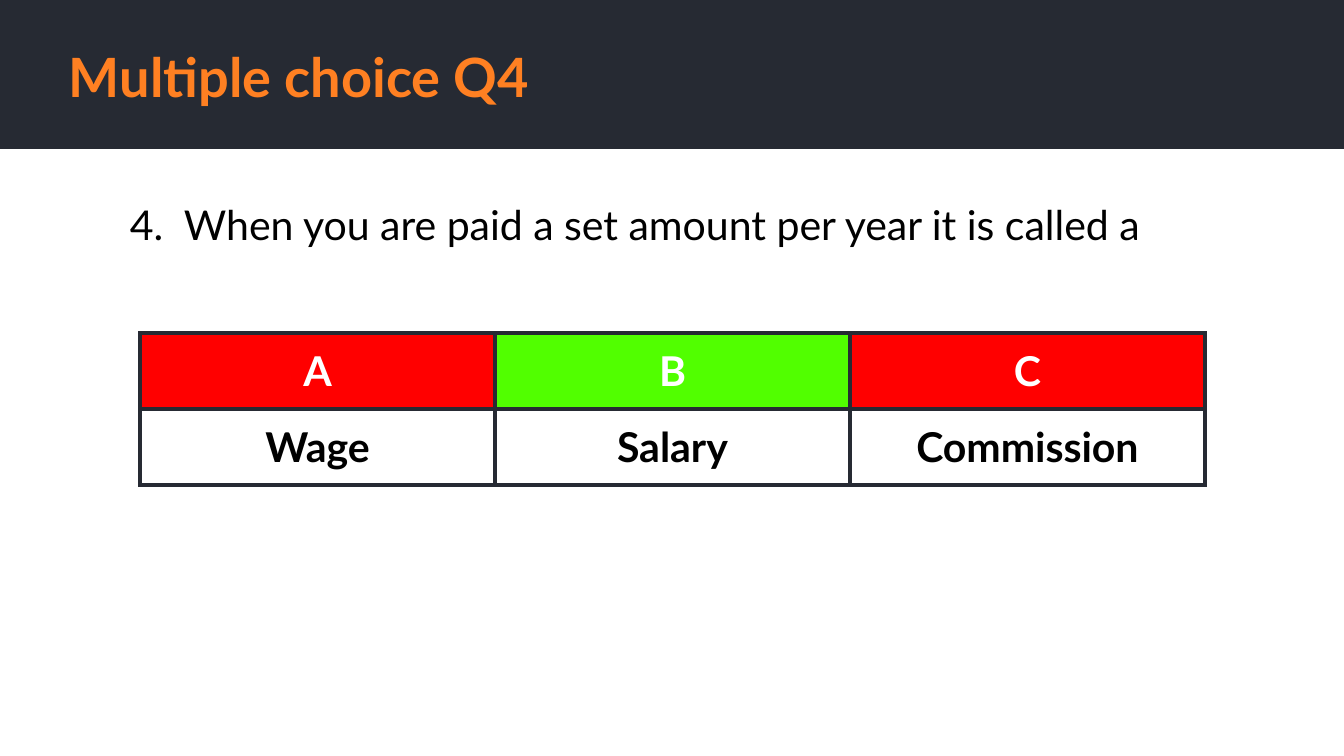
from lxml.etree import SubElement
from pptx import Presentation
from pptx.dml.color import RGBColor
from pptx.enum.shapes import MSO_SHAPE
from pptx.enum.text import MSO_ANCHOR, PP_ALIGN
from pptx.oxml import parse_xml
from pptx.oxml.ns import nsdecls, qn
from pptx.util import Inches, Pt

PX_PER_INCH = 134.4
NAVY = RGBColor(0x26, 0x2A, 0x33)
ORANGE = RGBColor(0xFF, 0x80, 0x22)
RED = RGBColor(0xFF, 0x00, 0x00)
GREEN = RGBColor(0x51, 0xFF, 0x00)
WHITE = RGBColor(0xFF, 0xFF, 0xFF)
BLACK = RGBColor(0x00, 0x00, 0x00)


def emu(px):
    return Inches(px / PX_PER_INCH)


def write(frame, text, *, size=22, color=BLACK, bold=False, align=PP_ALIGN.LEFT):
    paragraph = frame.paragraphs[0]
    paragraph.alignment = align
    run = paragraph.add_run()
    run.text = text
    run.font.name = "Lato"
    run.font.size = Pt(size)
    run.font.bold = bold
    run.font.color.rgb = color
    return paragraph


def number(paragraph, start, indent, hanging):
    """Number the paragraph from start, with a hanging indent in px."""
    properties = paragraph._p.get_or_add_pPr()
    properties.set("marL", str(emu(indent)))
    properties.set("indent", str(-emu(hanging)))
    color = SubElement(properties, qn("a:buClr"))
    SubElement(color, qn("a:srgbClr"), val=str(BLACK))
    SubElement(properties, qn("a:buAutoNum"), type="arabicPeriod", startAt=str(start))


def outline(cell, color, points):
    properties = cell._tc.get_or_add_tcPr()
    for position, side in enumerate("LRTB"):
        properties.insert(position, parse_xml(
            f'<a:ln{side} {nsdecls("a")} w="{Pt(points)}"><a:solidFill>'
            f'<a:srgbClr val="{color}"/></a:solidFill></a:ln{side}>'))


class QuizSlide:
    """Holds the style and the current slide."""

    inset = 13
    border = 2.25

    def __init__(self, deck):
        self.slide = deck.slides.add_slide(deck.slide_layouts[6])

    def pad(self, target):
        target.margin_left = target.margin_right = emu(self.inset)
        target.margin_top = target.margin_bottom = emu(self.inset)

    def band(self, *box, color):
        band = self.slide.shapes.add_shape(MSO_SHAPE.RECTANGLE, *map(emu, box))
        band.shadow.inherit = False
        band.fill.solid()
        band.fill.fore_color.rgb = color
        band.line.fill.background()

    def text(self, text, *box, anchor=MSO_ANCHOR.TOP, **style):
        frame = self.slide.shapes.add_textbox(*map(emu, box)).text_frame
        frame.word_wrap = True
        frame.vertical_anchor = anchor
        self.pad(frame)
        return write(frame, text, **style)

    def answers(self, left, top, column_width, row_height, choices):
        """Draw one column per (letter, colour, answer)."""
        table = self.slide.shapes.add_table(
            2, len(choices), emu(left), emu(top),
            emu(column_width * len(choices)), emu(row_height * 2)).table
        table.first_row = table.horz_banding = False
        for column, (letter, color, answer) in enumerate(choices):
            table.columns[column].width = emu(column_width)
            head, body = table.cell(0, column), table.cell(1, column)
            head.fill.solid()
            head.fill.fore_color.rgb = color
            body.fill.background()
            body.vertical_anchor = MSO_ANCHOR.MIDDLE
            for cell, label, ink in ((head, letter, WHITE), (body, answer, BLACK)):
                self.pad(cell)
                outline(cell, NAVY, self.border)
                write(cell.text_frame, label, color=ink, bold=True,
                      align=PP_ALIGN.CENTER)


def main():
    deck = Presentation()
    deck.slide_width, deck.slide_height = emu(1344), emu(756)
    quiz = QuizSlide(deck)
    quiz.band(0, 0, 1344, 149, color=NAVY)
    quiz.answers(140, 333, 355, 76, [
        ("A", RED, "Wage"),
        ("B", GREEN, "Salary"),
        ("C", RED, "Commission"),
    ])
    quiz.text("Multiple choice Q4", 56, 38, 1175, 76,
              anchor=MSO_ANCHOR.MIDDLE, size=29, color=ORANGE, bold=True)
    question = quiz.text("When you are paid a set amount per year it is called a",
                         104, 186, 1101, 76)
    number(question, start=4, indent=67, hanging=54)
    deck.save("out.pptx")


if __name__ == "__main__":
    main()
